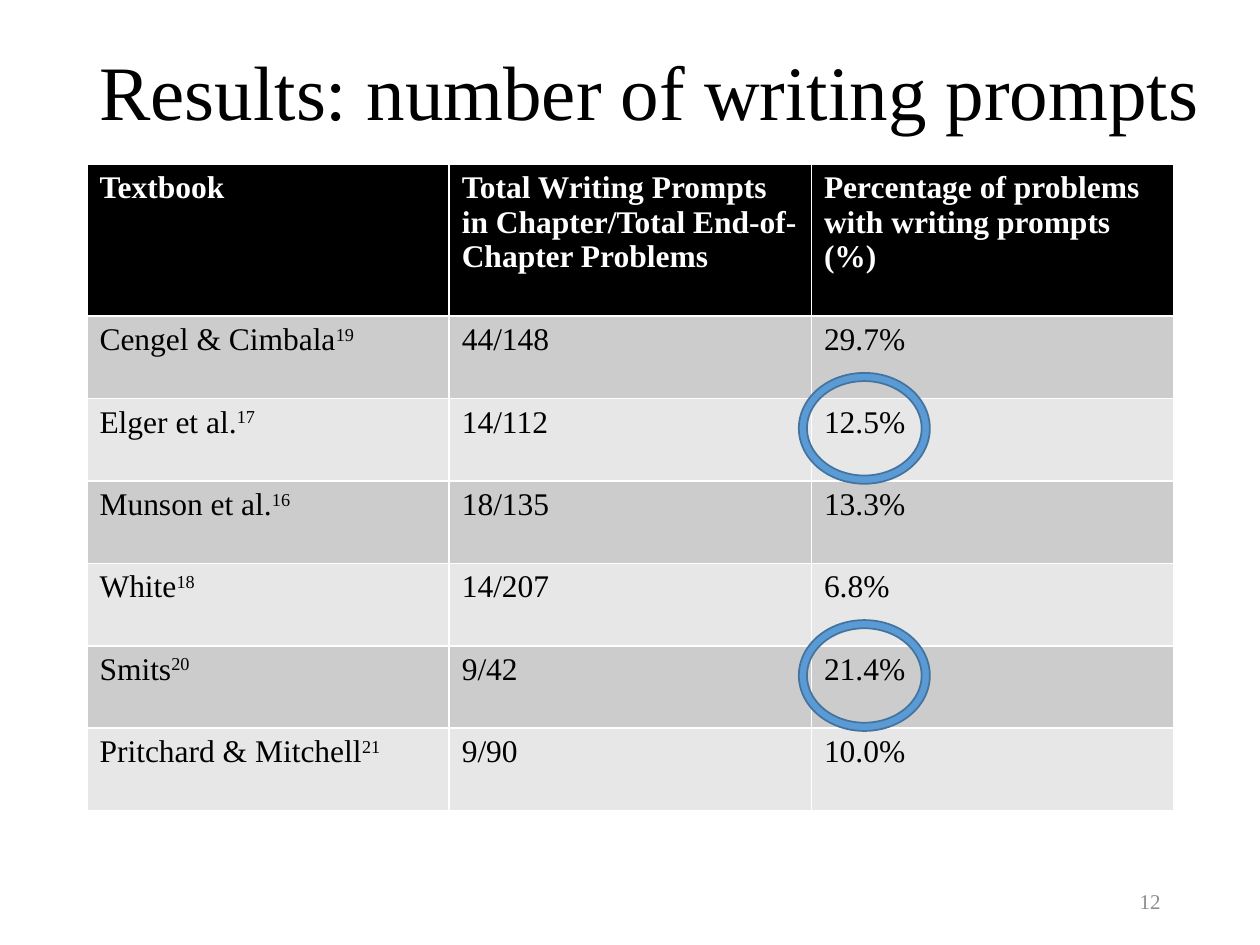
import pptx
import pptx.util
from pptx.dml.color import RGBColor
from pptx.enum.shapes import MSO_SHAPE
from pptx.enum.text import MSO_ANCHOR, PP_ALIGN
from pptx.util import Inches, Pt

FONT = "Times New Roman"
BLACK = RGBColor(0x00, 0x00, 0x00)
WHITE = RGBColor(0xFF, 0xFF, 0xFF)
GRAY = RGBColor(0x8C, 0x8C, 0x8C)
DARK_BAND = RGBColor(0xCC, 0xCC, 0xCC)
LIGHT_BAND = RGBColor(0xE7, 0xE7, 0xE7)
BLUE = RGBColor(0x5B, 0x9B, 0xD5)
DARK_BLUE = RGBColor(0x43, 0x73, 0x9E)

LEFT, TABLE_TOP = 0.69, 1.3
COLUMN_WIDTH, HEADER_HEIGHT, ROW_HEIGHT = 2.875, 1.21, 0.654
RING_WIDTH, RING_HEIGHT = 1.04, 0.88

HEADERS = [
    "Textbook",
    "Total Writing Prompts in Chapter/Total End-of-Chapter Problems",
    "Percentage of problems with writing prompts (%)",
]
TEXTBOOKS = [
    ("Cengel & Cimbala", "19", "44/148", "29.7%"),
    ("Elger et al.", "17", "14/112", "12.5%"),
    ("Munson et al.", "16", "18/135", "13.3%"),
    ("White", "18", "14/207", "6.8%"),
    ("Smits", "20", "9/42", "21.4%"),
    ("Pritchard & Mitchell", "21", "9/90", "10.0%"),
]
CIRCLED = ("Elger et al.", "Smits")


def place(shape, left, top, width, height):
    shape.left, shape.top = Inches(left), Inches(top)
    shape.width, shape.height = Inches(width), Inches(height)


def set_font(paragraph, size, color, bold=False):
    font = paragraph.font
    font.name, font.size, font.bold = FONT, Pt(size), bold
    font.color.rgb = color


def add_title(page, text):
    title = page.shapes.title
    place(title, LEFT, 0.03, 8.97, 1.45)
    title.text_frame.text = text
    title.text_frame.word_wrap = True
    title.text_frame.vertical_anchor = MSO_ANCHOR.MIDDLE
    para = title.text_frame.paragraphs[0]
    para.alignment = PP_ALIGN.LEFT
    para.line_spacing = 0.9
    set_font(para, 44, BLACK)


def add_page_number(page, text):
    box = page.shapes.add_textbox(0, 0, 0, 0)
    place(box, 7.06, 6.95, 2.25, 0.4)
    box.text_frame.word_wrap = True
    box.text_frame.vertical_anchor = MSO_ANCHOR.MIDDLE
    para = box.text_frame.paragraphs[0]
    para.text = text
    para.alignment = PP_ALIGN.RIGHT
    set_font(para, 12, GRAY)


def fill_cell(cell, text, fill, color, bold=False, reference=None):
    cell.fill.solid()
    cell.fill.fore_color.rgb = fill
    para = cell.text_frame.paragraphs[0]
    para.text = text
    set_font(para, 18, color, bold)
    if reference:
        span = para.add_run()
        span.text = reference
        span.font._element.set("baseline", "30000")


def add_results_table(page):
    table = page.shapes.add_table(
        len(TEXTBOOKS) + 1, len(HEADERS), Inches(LEFT), Inches(TABLE_TOP),
        Inches(COLUMN_WIDTH * len(HEADERS)),
        Inches(HEADER_HEIGHT + ROW_HEIGHT * len(TEXTBOOKS)),
    ).table
    for column in table.columns:
        column.width = Inches(COLUMN_WIDTH)
    for index, row in enumerate(table.rows):
        row.height = Inches(ROW_HEIGHT if index else HEADER_HEIGHT)
    for column, header in enumerate(HEADERS):
        fill_cell(table.cell(0, column), header, BLACK, WHITE, bold=True)
    for row, (name, reference, count, share) in enumerate(TEXTBOOKS, 1):
        band = DARK_BAND if row % 2 else LIGHT_BAND
        fill_cell(table.cell(row, 0), name, band, BLACK, reference=reference)
        fill_cell(table.cell(row, 1), count, band, BLACK)
        fill_cell(table.cell(row, 2), share, band, BLACK)


def add_ring(page, row):
    middle = TABLE_TOP + HEADER_HEIGHT + (row + 0.36) * ROW_HEIGHT
    ring = page.shapes.add_shape(MSO_SHAPE.DONUT, 0, 0, 0, 0)
    place(ring, 6.34, middle - RING_HEIGHT / 2, RING_WIDTH, RING_HEIGHT)
    ring.adjustments[0] = 0.074
    ring.shadow.inherit = False
    ring.fill.solid()
    ring.fill.fore_color.rgb = BLUE
    ring.line.color.rgb = DARK_BLUE
    ring.line.width = Pt(1)


def main():
    deck = pptx.Presentation()
    deck.slide_width, deck.slide_height = Inches(10), Inches(7.5)
    page = deck.slides.add_slide(deck.slide_layouts[5])
    add_title(page, "Results: number of writing prompts")
    add_page_number(page, "12")
    add_results_table(page)
    for row, textbook in enumerate(TEXTBOOKS):
        if textbook[0] in CIRCLED:
            add_ring(page, row)
    deck.save("out.pptx")


if __name__ == "__main__":
    main()
